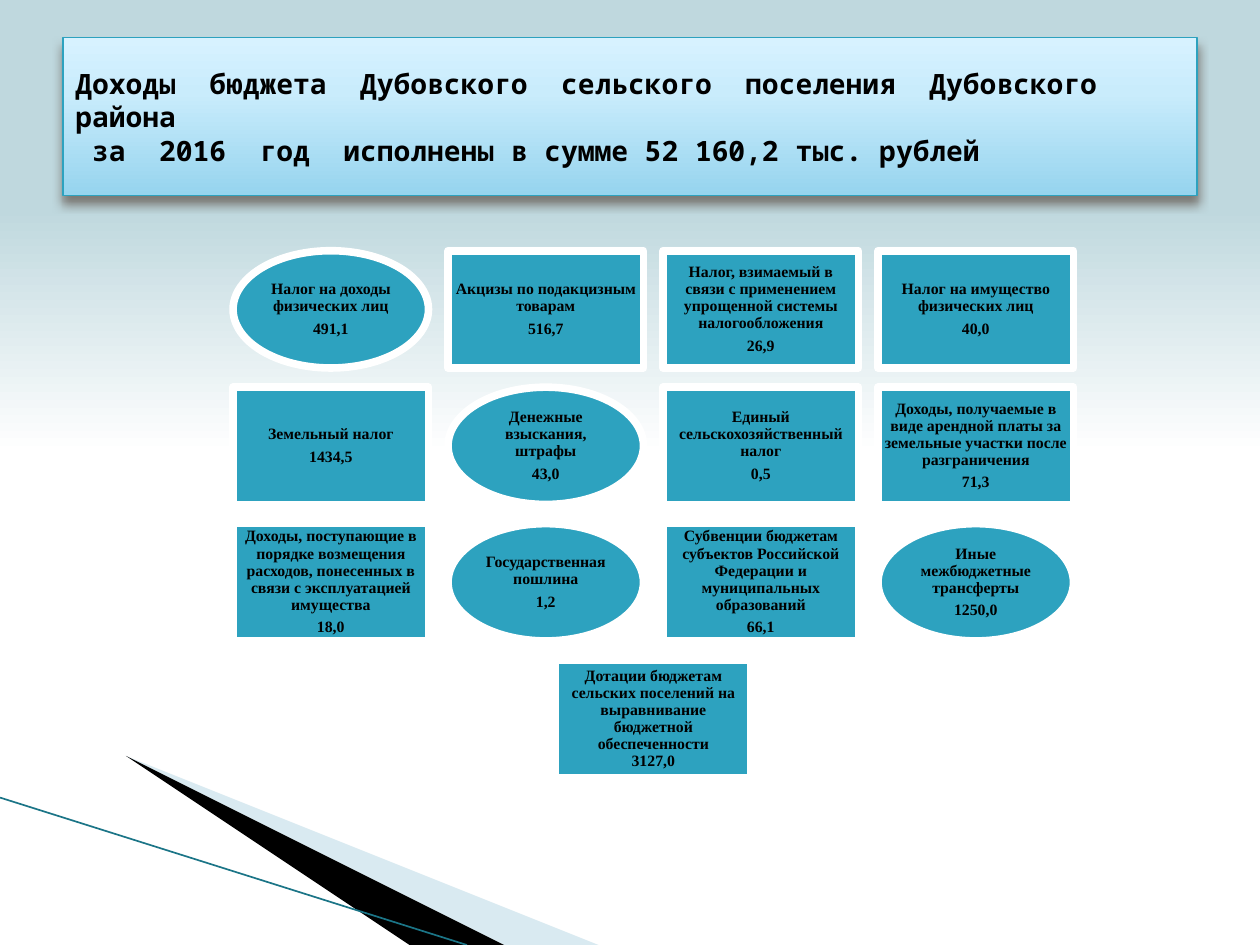
from lxml import etree
from pptx import Presentation
from pptx.dml.color import RGBColor
from pptx.enum.shapes import MSO_CONNECTOR, MSO_SHAPE
from pptx.enum.text import MSO_ANCHOR, PP_ALIGN
from pptx.oxml.ns import qn
from pptx.util import Inches, Pt

RECT, OVAL = MSO_SHAPE.RECTANGLE, MSO_SHAPE.OVAL
LEFT, CENTER = PP_ALIGN.LEFT, PP_ALIGN.CENTER
MIDDLE = MSO_ANCHOR.MIDDLE
LINE = MSO_CONNECTOR.STRAIGHT

WIDE, HIGH = 10, 7.5
TEAL, BLACK, WHITE = "2DA2BF", "000000", "FFFFFF"

TITLE = ("Доходы  бюджета  Дубовского  сельского  поселения  Дубовского района\v"
         " за  2016  год  исполнены в сумме 52 160,2 тыс. рублей")

ROWS = [
    [(OVAL, "Налог на доходы физических лиц", "491,1"),
     (RECT, "Акцизы по подакцизным товарам", "516,7"),
     (RECT, "Налог, взимаемый в связи с применением упрощенной системы "
            "налогообложения", "26,9"),
     (RECT, "Налог на имущество физических лиц", "40,0")],
    [(RECT, "Земельный налог", "1434,5"),
     (OVAL, "Денежные взыскания, штрафы", "43,0"),
     (RECT, "Единый сельскохозяйственный налог", "0,5"),
     (RECT, "Доходы, получаемые в виде арендной платы за земельные участки "
            "после разграничения", "71,3")],
    [(RECT, "Доходы, поступающие в порядке возмещения расходов, понесенных "
            "в связи с эксплуатацией имущества", "18,0"),
     (OVAL, "Государственная пошлина", "1,2"),
     (RECT, "Субвенции бюджетам субъектов Российской Федерации и "
            "муниципальных образований", "66,1"),
     (OVAL, "Иные межбюджетные трансферты", "1250,0")],
    [(RECT, "Дотации бюджетам сельских поселений на выравнивание бюджетной "
            "обеспеченности\v3127,0")],
]


def color(code):
    return RGBColor.from_string(code)


def blend(fill, root, stops):
    """Fill from bottom to top with (percent, colour) stops."""
    fill.gradient()
    fill.gradient_angle = 90
    items = root.find(".//" + qn("a:gsLst"))
    for old in list(items):
        items.remove(old)
    for pos, code in stops:
        stop = etree.SubElement(items, qn("a:gs"), pos=str(pos * 1000))
        etree.SubElement(stop, qn("a:srgbClr"), val=code)


def shade(shape, code, alpha, blur, dist):
    """Cast a shadow straight down."""
    shape.shadow.inherit = False
    effects = shape.element.spPr.find(qn("a:effectLst"))
    outer = etree.SubElement(effects, qn("a:outerShdw"), blurRad=str(Pt(blur)),
                             dist=str(Pt(dist)), dir="5400000", rotWithShape="0")
    tone = etree.SubElement(outer, qn("a:srgbClr"), val=code)
    etree.SubElement(tone, qn("a:alpha"), val=str(alpha * 1000))


def add_box(slide, kind, box, edge, width):
    shape = slide.shapes.add_shape(kind, *map(Inches, box))
    shape.shadow.inherit = False
    shape.line.color.rgb = color(edge)
    shape.line.width = Pt(width)
    return shape


def write(shape, texts, font, size, align):
    frame = shape.text_frame
    frame.word_wrap = True
    frame.vertical_anchor = MIDDLE
    frame.text = "\n".join(texts)
    for par in frame.paragraphs:
        par.alignment = align
        par.font.name = font
        par.font.size = Pt(size)
        par.font.bold = True
        par.font.color.rgb = color(BLACK)


def add_title(slide, box):
    shape = add_box(slide, RECT, box, TEAL, 0.75)
    blend(shape.fill, shape.element,
          [(0, "96D4EE"), (65, "C9ECFC"), (100, "D7F2FF")])
    shade(shape, "4E3B30", 60, 6, 4)
    write(shape, [TITLE], "Noto Sans Mono", 16, LEFT)


def add_cell(slide, kind, box, texts):
    shape = add_box(slide, kind, box, WHITE, 4.33)
    shape.fill.solid()
    shape.fill.fore_color.rgb = color(TEAL)
    write(shape, texts, "Times New Roman", 9, CENTER)
    frame = shape.text_frame
    frame.margin_left = frame.margin_right = Inches(0.04)
    frame.margin_top = frame.margin_bottom = Inches(0.04)
    for par in frame.paragraphs:
        par.line_spacing = 0.9
        par.space_after = Pt(3.15)


def add_grid(slide, box):
    """Lay the rows out evenly, with a short row centred."""
    left, top, width, height = box
    most = max(map(len, ROWS))
    gap = 0.1  # share of a cell's width
    cell = width / (most + (most - 1) * gap)
    step = cell * (1 + gap)
    tall = cell * 0.6
    rise = (height - tall) / (len(ROWS) - 1)
    for row, items in enumerate(ROWS):
        start = left + (most - len(items)) / 2 * step
        for col, (kind, *texts) in enumerate(items):
            spot = (start + col * step, top + row * rise, cell, tall)
            add_cell(slide, kind, spot, texts)


def add_wedge(slide, points, code, alpha=100):
    pen = slide.shapes.build_freeform(*points[0], scale=Inches(1))
    pen.add_line_segments(points[1:])
    shape = pen.convert_to_shape()
    shape.shadow.inherit = False
    shape.line.fill.background()
    shape.fill.solid()
    shape.fill.fore_color.rgb = color(code)
    tone = shape.element.spPr.find(".//" + qn("a:srgbClr"))
    etree.SubElement(tone, qn("a:alpha"), val=str(alpha * 1000))


def add_corner(slide, box):
    """Draw the wedges that fan out to the bottom edge."""
    left, top, width, height = box
    low = top + height
    tip = (left + width * 0.09, top + height * 0.14)
    pale, mid, near = (left + width * part for part in (1, 0.77, 0.625))
    add_wedge(slide, [tip, (pale, low), (mid, low)], "A0CBDC", 40)
    add_wedge(slide, [tip, (mid, low), (near, low)], BLACK)
    edge = slide.shapes.add_connector(
        LINE, *map(Inches, (left, top, near, low)))
    edge.line.color.rgb = color("1B7587")
    edge.line.width = Pt(0.95)
    etree.SubElement(edge.element.spPr, qn("a:effectLst"))


def main():
    deck = Presentation()
    deck.slide_width, deck.slide_height = Inches(WIDE), Inches(HIGH)
    slide = deck.slides.add_slide(deck.slide_layouts[6])
    blend(slide.background.fill, slide.element,
          [(0, WHITE), (52, WHITE), (78, "BFD8DE"), (100, "BFD8DE")])
    add_corner(slide, (0, 6.33, 5.93, HIGH - 6.33))
    add_title(slide, (WIDE * 0.05, HIGH * 0.04, WIDE * 0.9, HIGH / 6))
    add_grid(slide, (1.85, 1.99, 6.67, 4.18))
    deck.save("out.pptx")


if __name__ == "__main__":
    main()
